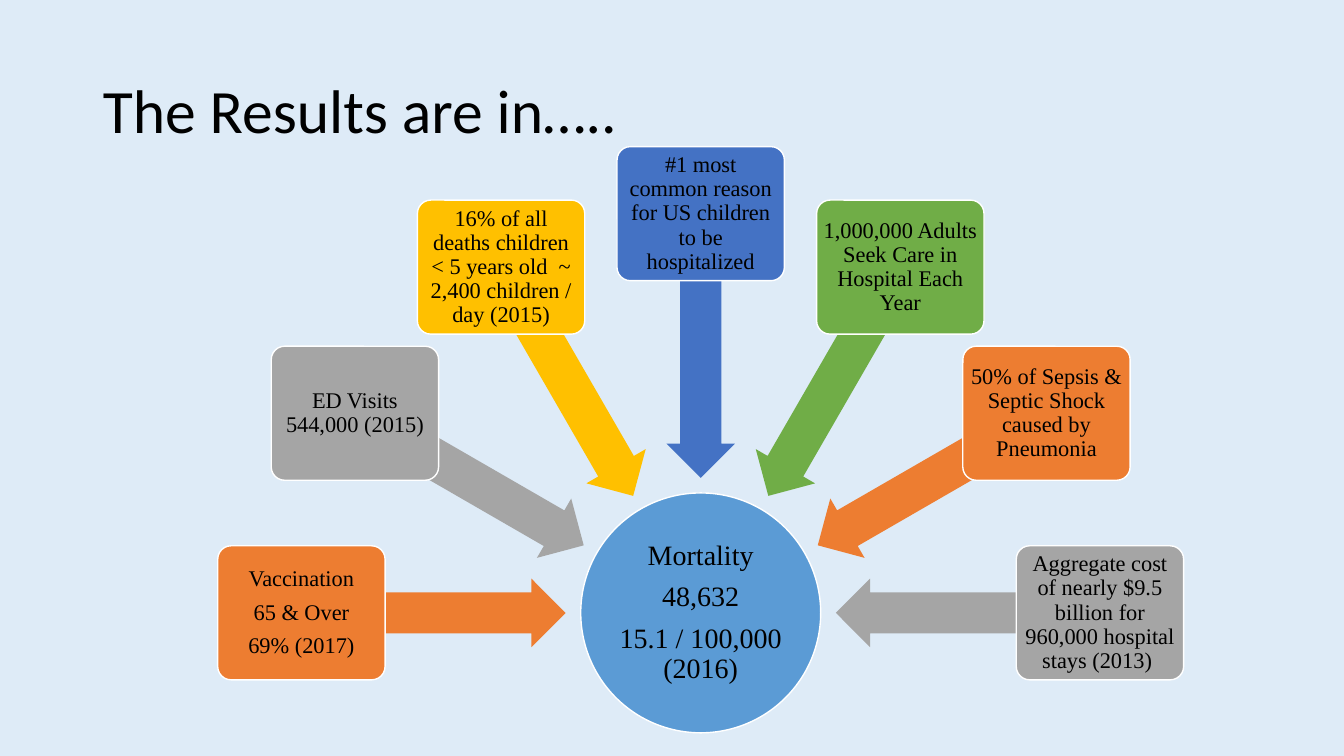
from math import cos, radians, sin
from pptx import Presentation
from pptx.dml.color import RGBColor
from pptx.enum.shapes import MSO_SHAPE
from pptx.enum.text import MSO_ANCHOR, PP_ALIGN
from pptx.util import Inches, Pt

OVAL, ROUND, ARROW = MSO_SHAPE.OVAL, MSO_SHAPE.ROUNDED_RECTANGLE, MSO_SHAPE.LEFT_ARROW
MIDDLE, LEFT, CENTER = MSO_ANCHOR.MIDDLE, PP_ALIGN.LEFT, PP_ALIGN.CENTER
PALE = RGBColor(0xDE, 0xEB, 0xF7)
SKY = RGBColor(0x5B, 0x9B, 0xD5)
ORANGE = RGBColor(0xED, 0x7D, 0x31)
GRAY = RGBColor(0xA5, 0xA5, 0xA5)
GOLD = RGBColor(0xFF, 0xC0, 0x00)
BLUE = RGBColor(0x44, 0x72, 0xC4)
GREEN = RGBColor(0x70, 0xAD, 0x47)
WHITE = RGBColor(0xFF, 0xFF, 0xFF)
BLACK = RGBColor(0, 0, 0)

# Content: the hub, then the facts clockwise from the left
TITLE = "The Results are in….."
HUB = ["Mortality", "48,632", "15.1 / 100,000 (2016)"]
FACTS = [
    (ORANGE, ["Vaccination", "65 & Over", "69% (2017)"]),
    (GRAY, ["ED Visits 544,000 (2015)"]),
    (GOLD, ["16% of all deaths children < 5 years old  ~ 2,400 children / day (2015)"]),
    (BLUE, ["#1 most common reason for US children to be hospitalized"]),
    (GREEN, ["1,000,000 Adults Seek Care in Hospital Each Year"]),
    (ORANGE, ["50% of Sepsis & Septic Shock caused by Pneumonia"]),
    (GRAY, ["Aggregate cost of nearly $9.5 billion for 960,000 hospital stays (2013) "]),
]

# Layout in inches: everything sits on circles round the hub
WIDE, HIGH = 13.33, 7.5
MID_X, MID_Y = 6.95, 6.08
HUB_SIZE, BOX_SIZE, ARROW_SIZE = (2.38, 2.38), (1.66, 1.33), (2.62, 0.68)
BOX_REACH, ARROW_REACH = 3.96, 2.65
STEP = 180 / (len(FACTS) - 1)

deck = Presentation()
deck.slide_width, deck.slide_height = Inches(WIDE), Inches(HIGH)
slide = deck.slides.add_slide(deck.slide_layouts[5])
slide.background.fill.solid()
slide.background.fill.fore_color.rgb = PALE


def add_part(kind, size, color, turn=0, reach=0):
    """Centre a shape at a given angle and distance from the hub."""
    wide, high = size
    x = MID_X + reach * cos(radians(turn))
    y = MID_Y + reach * sin(radians(turn))
    part = slide.shapes.add_shape(kind, Inches(x - wide / 2), Inches(y - high / 2),
                                  Inches(wide), Inches(high))
    part.shadow.inherit = False
    part.fill.solid()
    part.fill.fore_color.rgb = color
    if kind == ARROW:
        part.line.fill.background()
    else:
        part.line.color.rgb = WHITE
        part.line.width = Pt(1)
    return part


def write(part, lines, size, font, inset, align=CENTER, after=0.4):
    frame = part.text_frame
    frame.word_wrap = True
    frame.vertical_anchor = MIDDLE
    frame.margin_left = frame.margin_right = Inches(inset)
    frame.margin_top = frame.margin_bottom = Inches(min(inset, 0.05))
    for i, line in enumerate(lines):
        para = frame.add_paragraph() if i else frame.paragraphs[0]
        para.alignment = align
        para.line_spacing = 0.9
        para.space_after = Pt(size * after)
        run = para.add_run()
        run.text = line
        run.font.size, run.font.name = Pt(size), font
        run.font.color.rgb = BLACK


# Title
title = slide.shapes.title
title.left, title.top = Inches(0.92), Inches(0.4)
title.width, title.height = Inches(11.5), Inches(1.45)
write(title, [TITLE], 44, "Calibri", 0.1, LEFT, 0)

# Hub
write(add_part(OVAL, HUB_SIZE, SKY), HUB, 20, "Times New Roman", 0.01)

# Arrows and fact boxes, fanned over the upper half
for i, (color, lines) in enumerate(FACTS):
    turn = 180 + i * STEP
    arrow = add_part(ARROW, ARROW_SIZE, color, turn, ARROW_REACH)
    arrow.rotation = turn % 360
    arrow.adjustments[0], arrow.adjustments[1] = 0.6, 0.5
    box = add_part(ROUND, BOX_SIZE, color, turn, BOX_REACH)
    box.adjustments[0] = 0.1
    write(box, lines, 16, "Times New Roman", 0.03)

deck.save("out.pptx")
